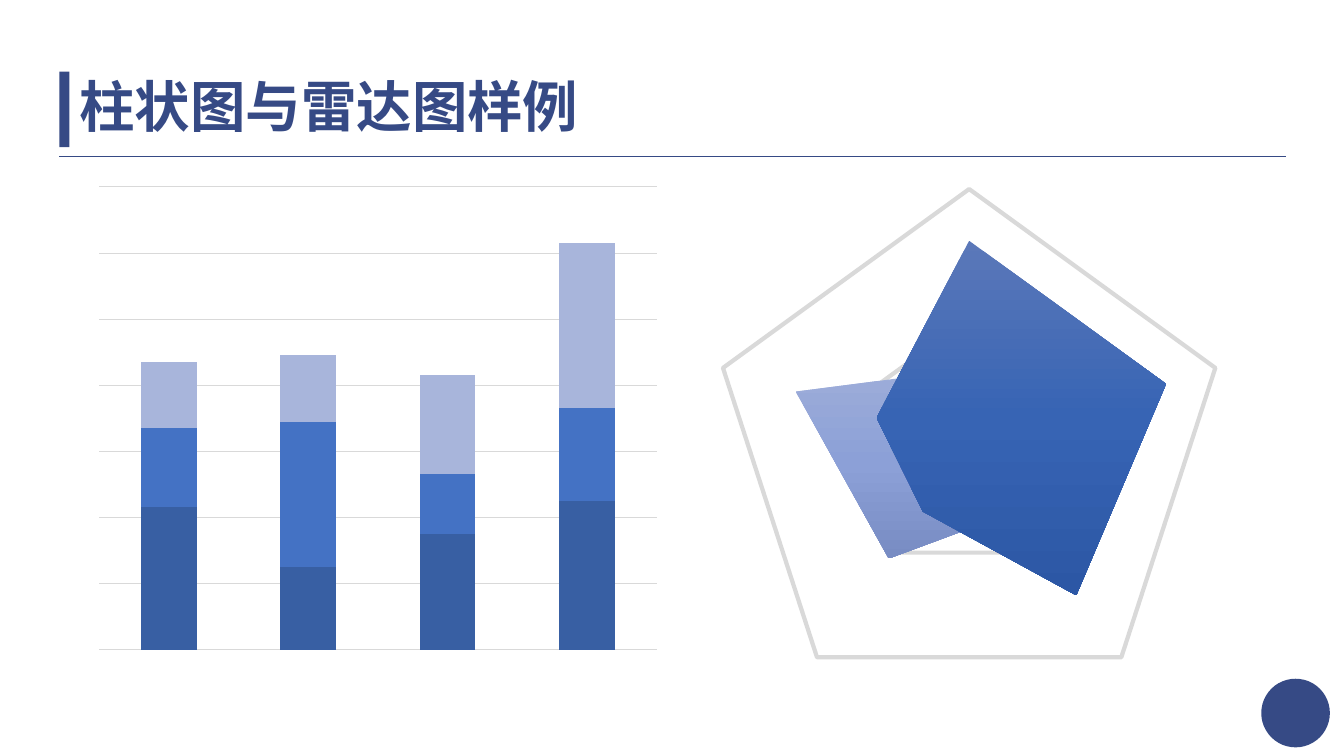
"""Builds a slide with a stacked column chart beside a filled radar chart."""
from dataclasses import dataclass

from lxml import etree
from pptx import Presentation
from pptx.chart.data import CategoryChartData
from pptx.dml.color import RGBColor
from pptx.enum.chart import XL_CHART_TYPE
from pptx.enum.shapes import MSO_CONNECTOR, MSO_SHAPE
from pptx.enum.text import MSO_ANCHOR
from pptx.oxml import parse_xml
from pptx.oxml.ns import nsdecls, qn
from pptx.util import Pt

STACKED = XL_CHART_TYPE.COLUMN_STACKED
RADAR = XL_CHART_TYPE.RADAR_FILLED
RECTANGLE = MSO_SHAPE.RECTANGLE
OVAL = MSO_SHAPE.OVAL
STRAIGHT = MSO_CONNECTOR.STRAIGHT
MIDDLE = MSO_ANCHOR.MIDDLE


@dataclass(frozen=True)
class Theme:
    navy: str = "364A85"
    grid: str = "D9D9D9"
    chart_text: str = "000000"
    columns: tuple = ("385FA3", "4472C4", "A8B5DB")
    radar_front: tuple = ("5B78B9", "3764B4", "2C57A5")
    radar_back: tuple = ("9DADD9", "8CA0D7", "788CC3")
    title_font: str = "Noto Sans CJK SC"
    chart_font: str = "Calibri"
    title_size: float = 39.6
    chart_size: float = 10


@dataclass(frozen=True)
class Box:
    left: float
    top: float
    width: float
    height: float

    def lengths(self) -> tuple:
        return Pt(self.left), Pt(self.top), Pt(self.width), Pt(self.height)


@dataclass(frozen=True)
class Series:
    values: tuple
    colours: tuple


@dataclass(frozen=True)
class ChartSpec:
    kind: int
    box: Box
    series: tuple
    maximum: float
    step: float
    grid_width: float


@dataclass(frozen=True)
class Accent:
    preset: int
    box: Box


THEME = Theme()
ACCENTS = (
    Accent(RECTANGLE, Box(42.5, 51.2, 7.2, 54)),
    Accent(OVAL, Box(900.9, 484.8, 49, 49)),
)
TITLE_BOX = Box(49.7, 51.2, 869, 54)
RULE_LEFT, RULE_RIGHT, RULE_Y = 42.5, 918.3, 111.6
COLUMN_VALUES = ((86, 50, 70, 90), (48, 88, 36, 56), (40, 40, 60, 100))
CHARTS = (
    ChartSpec(RADAR, Box(417.6, 127.4, 549.4, 385.2), (
        Series((100, 100, 88, 38, 47), THEME.radar_front),
        Series((38, 38, 38, 66, 88), THEME.radar_back),
    ), 125, 62.5, 3),
    ChartSpec(STACKED, Box(62.6, 126.7, 414.7, 344.2), tuple(
        Series(values, (colour,))
        for values, colour in zip(COLUMN_VALUES, THEME.columns)
    ), 280, 40, 0.75),
)


def rgb(colour: str) -> RGBColor:
    return RGBColor.from_string(colour)


def add_accent(slide, accent: Accent) -> None:
    shape = slide.shapes.add_shape(accent.preset, *accent.box.lengths())
    shape.shadow.inherit = False
    shape.fill.solid()
    shape.fill.fore_color.rgb = rgb(THEME.navy)
    shape.line.fill.background()


def add_rule(slide) -> None:
    rule = slide.shapes.add_connector(
        STRAIGHT, Pt(RULE_LEFT), Pt(RULE_Y), Pt(RULE_RIGHT), Pt(RULE_Y))
    rule.line.color.rgb = rgb(THEME.navy)
    rule.line.width = Pt(0.5)
    etree.SubElement(rule._element.spPr, qn("a:effectLst"))


def add_title(slide, title: str) -> None:
    frame = slide.shapes.add_textbox(*TITLE_BOX.lengths()).text_frame
    frame.word_wrap = True
    frame.vertical_anchor = MIDDLE
    paragraph = frame.paragraphs[0]
    paragraph.text = title
    paragraph.line_spacing = 0.9
    font = paragraph.font
    font.name = THEME.title_font
    font.size = Pt(THEME.title_size)
    font.bold = True
    font.color.rgb = rgb(THEME.navy)
    east_asian = etree.SubElement(font._element, qn("a:ea"))
    east_asian.set("typeface", THEME.title_font)


def fill_series(plotted, colours: tuple) -> None:
    plotted.format.line.fill.background()
    if len(colours) == 1:
        plotted.format.fill.solid()
        plotted.format.fill.fore_color.rgb = rgb(colours[0])
        return
    gap = 100000 // (len(colours) - 1)
    stops = "".join(
        f'<a:gs pos="{index * gap}"><a:srgbClr val="{colour}"/></a:gs>'
        for index, colour in enumerate(colours))
    gradient = parse_xml(
        f'<a:gradFill {nsdecls("a")} rotWithShape="1"><a:gsLst>{stops}</a:gsLst>'
        '<a:lin ang="5400000" scaled="0"/></a:gradFill>')
    plotted._element.get_or_add_spPr().insert(0, gradient)


def add_chart(slide, spec_: ChartSpec) -> None:
    data = CategoryChartData()
    data.categories = [
        str(number + 1) for number in range(len(spec_.series[0].values))]
    for number, series in enumerate(spec_.series, 1):
        data.add_series(f"Series {number}", series.values)
    chart = slide.shapes.add_chart(
        spec_.kind, *spec_.box.lengths(), data).chart
    chart.has_title = False
    chart.has_legend = False
    chart.font.name = THEME.chart_font
    chart.font.size = Pt(THEME.chart_size)
    chart.font.color.rgb = rgb(THEME.chart_text)

    chart.category_axis.visible = False
    chart.category_axis.has_major_gridlines = False
    scale = chart.value_axis
    scale.visible = False
    scale.minimum_scale = 0
    scale.maximum_scale = spec_.maximum
    scale.major_unit = spec_.step
    scale.has_major_gridlines = True
    scale.major_gridlines.format.line.color.rgb = rgb(THEME.grid)
    scale.major_gridlines.format.line.width = Pt(spec_.grid_width)

    plot = chart.plots[0]
    plot.vary_by_categories = False
    if spec_.kind == STACKED:
        plot.gap_width = 150
        plot.overlap = 100
    for plotted, series in zip(plot.series, spec_.series):
        fill_series(plotted, series.colours)


def main() -> None:
    deck = Presentation()
    deck.slide_width, deck.slide_height = Pt(960), Pt(540)
    slide = deck.slides.add_slide(deck.slide_layouts[6])
    for accent in ACCENTS:
        add_accent(slide, accent)
    add_rule(slide)
    add_title(slide, "柱状图与雷达图样例")
    for chart in CHARTS:
        add_chart(slide, chart)
    deck.save("out.pptx")


if __name__ == "__main__":
    main()
